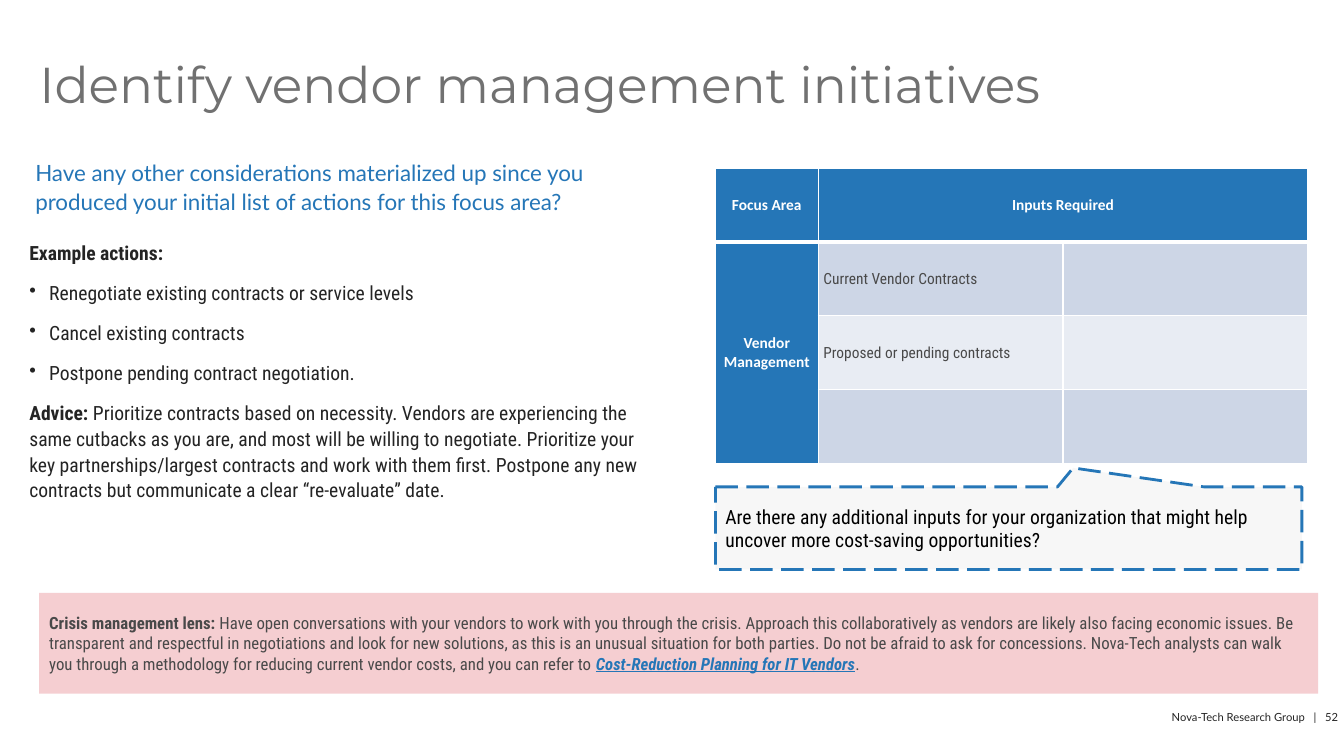
from lxml import etree
from pptx import Presentation
from pptx.dml.color import RGBColor
from pptx.enum import dml, shapes, text
from pptx.oxml import ns
from pptx.util import Cm, Pt

BLUE = RGBColor(0x25, 0x76, 0xB7)
WHITE = RGBColor(0xFF, 0xFF, 0xFF)
BLACK = RGBColor(0, 0, 0)
INK = RGBColor(0x24, 0x24, 0x24)
SLATE = RGBColor(0x49, 0x49, 0x49)
TITLE_GREY = RGBColor(0x71, 0x71, 0x71)
PALE_GREY = RGBColor(0xF2, 0xF2, 0xF2)
PINK = RGBColor(0xF5, 0xCE, 0xD1)
BAND_DARK = RGBColor(0xCD, 0xD6, 0xE6)
BAND_LIGHT = RGBColor(0xE8, 0xEC, 0xF3)
BODY_FONT = "Roboto Condensed"
LEFT, CENTER, RIGHT = text.PP_ALIGN.LEFT, text.PP_ALIGN.CENTER, text.PP_ALIGN.RIGHT


class SlideBuilder:
    def __init__(self, slide):
        self.slide = slide

    def set_text(self, paragraph, content, size, color, font=BODY_FONT, bold=False,
                 align=LEFT, spacing=None, before=0, bullet=False):
        """Fill a paragraph; content is a string or a list of (text, bold) pairs."""
        paragraph.alignment = align
        paragraph.space_before = Pt(before)
        if spacing:
            paragraph.line_spacing = spacing
        if bullet:
            props = paragraph._p.get_or_add_pPr()
            props.set("marL", str(Cm(0.5)))
            props.set("indent", str(-Cm(0.5)))
            etree.SubElement(props, ns.qn("a:buChar"), char="•")
        face = paragraph.font
        face.name, face.size = font, Pt(size)
        face.color.rgb = color
        runs = [(content, bold)] if isinstance(content, str) else content
        if len({weight for _, weight in runs}) == 1:
            face.bold = runs[0][1]
        for words, weight in runs:
            run = paragraph.add_run()
            run.text = words
            if len(runs) > 1:
                run.font.bold = weight
        return paragraph

    def title(self, box, words):
        heading = self.slide.shapes.title
        heading.left, heading.top, heading.width, heading.height = map(Cm, box)
        frame = heading.text_frame
        self.set_frame(frame, text.MSO_ANCHOR.TOP)
        self.set_text(frame.paragraphs[0], words, 36, TITLE_GREY, "Montserrat", spacing=0.9)

    def set_frame(self, frame, anchor, margins=(0, 0, 0, 0)):
        frame.word_wrap = True
        frame.auto_size = text.MSO_AUTO_SIZE.NONE
        frame.vertical_anchor = anchor
        (frame.margin_left, frame.margin_top,
         frame.margin_right, frame.margin_bottom) = map(Cm, margins)

    def text_box(self, box, margins=(0, 0, 0, 0)):
        frame = self.slide.shapes.add_textbox(*map(Cm, box)).text_frame
        self.set_frame(frame, text.MSO_ANCHOR.TOP, margins)
        return frame

    def panel(self, kind, box, fill):
        panel = self.slide.shapes.add_shape(kind, *map(Cm, box))
        panel.shadow.inherit = False
        panel.fill.solid()
        panel.fill.fore_color.rgb = fill
        panel.line.fill.background()
        self.set_frame(panel.text_frame, text.MSO_ANCHOR.MIDDLE, (0.25, 0.13, 0.25, 0.13))
        return panel

    def table(self, left, top, widths, row_height, rows):
        grid = self.slide.shapes.add_table(
            rows, len(widths), Cm(left), Cm(top), Cm(sum(widths)), Cm(row_height * rows)).table
        for column, width in zip(grid.columns, widths):
            column.width = Cm(width)
        for row in grid.rows:
            row.height = Cm(row_height)
        return grid

    def style_cell(self, cell, fill, top=1, bottom=1, margins=(0.13, 0.13, 0.13, 0.13)):
        props = cell._tc.get_or_add_tcPr()
        for side, width in (("L", 1), ("R", 1), ("T", top), ("B", bottom)):
            edge = etree.SubElement(props, ns.qn(f"a:ln{side}"), w=str(Pt(width)))
            paint = etree.SubElement(edge, ns.qn("a:solidFill"))
            etree.SubElement(paint, ns.qn("a:srgbClr"), val=str(WHITE))
        cell.fill.solid()
        cell.fill.fore_color.rgb = fill
        cell.vertical_anchor = text.MSO_ANCHOR.MIDDLE
        (cell.margin_left, cell.margin_top,
         cell.margin_right, cell.margin_bottom) = map(Cm, margins)


def add_inputs_table(page):
    labels = [["Focus Area", "Inputs Required", ""],
              ["Vendor Management", "Current Vendor Contracts", ""],
              ["", "Proposed or pending contracts", ""],
              ["", "", ""]]
    grid = page.table(18.03, 4.24, (2.59, 6.17, 6.17), 1.86, len(labels))
    for r, row in enumerate(labels):
        for c, label in enumerate(row):
            cell = grid.cell(r, c)
            header = r == 0 or c == 0
            band = BAND_DARK if r % 2 else BAND_LIGHT
            page.style_cell(cell, BLUE if header else band,
                            top=3 if r == 1 else 1, bottom=3 if r == 0 else 1,
                            margins=(0.18, 0, 0.18, 0) if header else (0.13,) * 4)
            if label:
                page.set_text(cell.text_frame.paragraphs[0], label, 11,
                              WHITE if header else SLATE,
                              "Calibri" if header else BODY_FONT, header,
                              CENTER if header else LEFT)
    grid.cell(0, 1).merge(grid.cell(0, 2))
    grid.cell(1, 0).merge(grid.cell(3, 0))


def add_callout(page):
    callout = page.panel(shapes.MSO_SHAPE.RECTANGULAR_CALLOUT,
                         (18.03, 12.27, 14.78, 2.08), PALE_GREY)
    callout.adjustments[0], callout.adjustments[1] = 0.11, -0.73
    tint = callout._element.spPr.find(ns.qn("a:solidFill")).find(ns.qn("a:srgbClr"))
    etree.SubElement(tint, ns.qn("a:alpha"), val="54000")
    callout.line.color.rgb = BLUE
    callout.line.width = Pt(2)
    callout.line.dash_style = dml.MSO_LINE.LONG_DASH
    page.set_text(callout.text_frame.paragraphs[0],
                  "Are there any additional inputs for your organization that might help "
                  "uncover more cost-saving opportunities?", 14, BLACK)


def add_crisis_lens(page):
    lens = page.panel(shapes.MSO_SHAPE.RECTANGLE, (0.99, 14.94, 32.23, 2.54), PINK)
    advice = page.set_text(lens.text_frame.paragraphs[0], [
        ("Crisis management lens: ", True),
        ("Have open conversations with your vendors to work with you through the crisis. "
         "Approach this collaboratively as vendors are likely also facing economic issues. "
         "Be transparent and respectful in negotiations and look for new solutions, as this "
         "is an unusual situation for both parties. Do not be afraid to ask for concessions. "
         "Nova-Tech analysts can walk you through a methodology for reducing current vendor "
         "costs, and you can refer to ", False),
        ("Cost-Reduction Planning for IT Vendors", True),
        (".", False)], 12, SLATE)
    reference = advice.runs[2].font
    reference.italic = reference.underline = True
    reference.color.rgb = BLUE


def add_actions(page):
    question = page.text_box((0.89, 3.94, 15.11, 1.78))
    page.set_text(question.paragraphs[0],
                  "Have any other considerations materialized up since you produced your "
                  "initial list of actions for this focus area?", 16, BLUE, "Lato", spacing=1.1)
    actions = page.text_box((0.74, 6.02, 15.98, 8.33))
    page.set_text(actions.paragraphs[0], "Example actions:", 14, INK, bold=True, spacing=1.1)
    for action in ("Renegotiate existing contracts or service levels",
                   "Cancel existing contracts",
                   "Postpone pending contract negotiation."):
        page.set_text(actions.add_paragraph(), action, 14, INK,
                      spacing=1.1, before=10, bullet=True)
    page.set_text(actions.add_paragraph(), [
        ("Advice: ", True),
        ("Prioritize contracts based on necessity. Vendors are experiencing the same "
         "cutbacks as you are, and most will be willing to negotiate. Prioritize your key "
         "partnerships/largest contracts and work with them first. Postpone any new "
         "contracts but communicate a clear “re-evaluate” date.", False)],
        14, INK, spacing=1.1, before=10)


def main():
    deck = Presentation()
    deck.slide_width, deck.slide_height = Cm(33.87), Cm(19.05)
    page = SlideBuilder(deck.slides.add_slide(deck.slide_layouts[5]))
    footer = page.text_box((24.43, 17.91, 9.55, 0.33), (0, 0, 0.25, 0))
    page.set_text(footer.paragraphs[0], "Nova-Tech Research Group   |   52", 8, INK, "Lato",
                  align=RIGHT)
    page.title((0.99, 1.52, 31.19, 3.15), "Identify vendor management initiatives")
    add_crisis_lens(page)
    add_inputs_table(page)
    add_callout(page)
    add_actions(page)
    deck.save("out.pptx")


if __name__ == "__main__":
    main()
